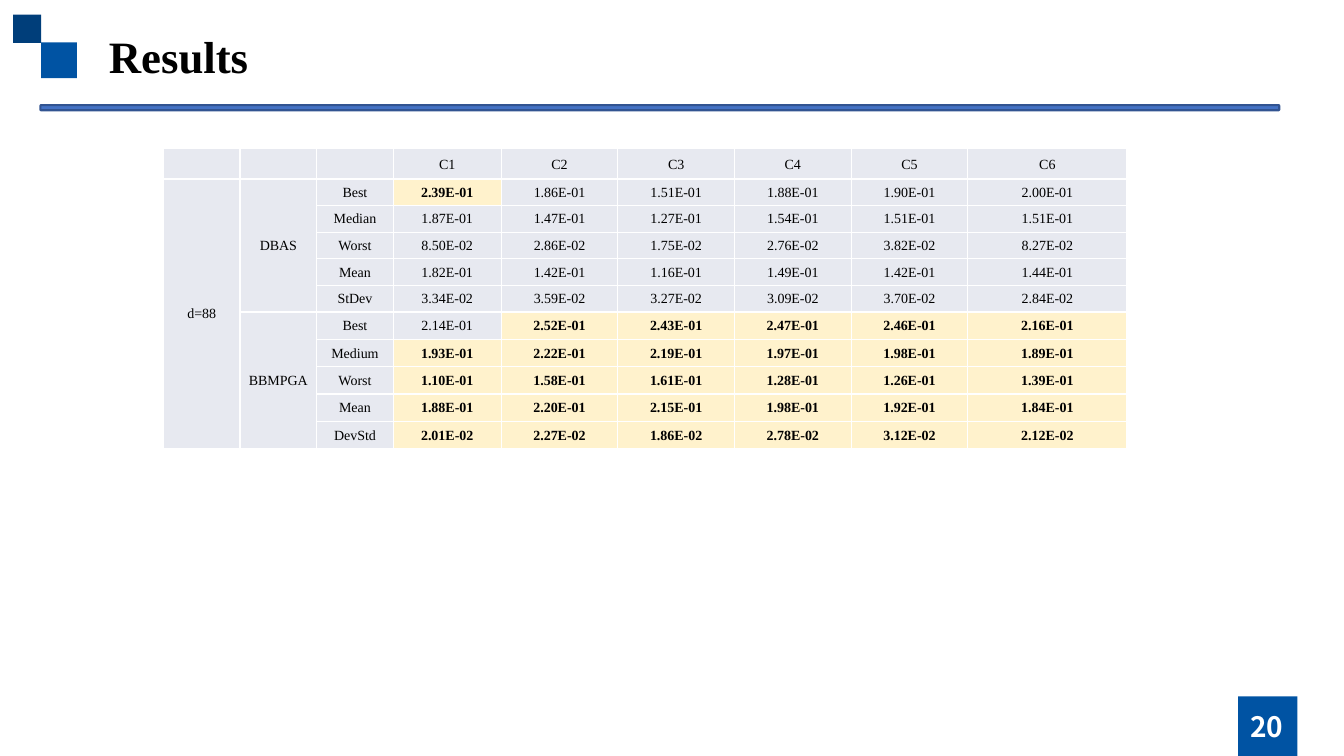
"""Build the results slide comparing DBAS and BBMPGA."""
from lxml import etree
from pptx import Presentation
from pptx.dml.color import RGBColor
from pptx.enum.shapes import MSO_SHAPE
from pptx.enum.text import MSO_ANCHOR, PP_ALIGN
from pptx.oxml.ns import qn
from pptx.util import Cm, Pt

RECT, ROUNDED = MSO_SHAPE.RECTANGLE, MSO_SHAPE.ROUNDED_RECTANGLE
MIDDLE, CENTER, LEFT = MSO_ANCHOR.MIDDLE, PP_ALIGN.CENTER, PP_ALIGN.LEFT
TITLE_ONLY = 5
SERIF, SANS = "Times New Roman", "Noto Sans CJK SC"
BLUE, NAVY, BLACK, WHITE = "0053A3", "003E7A", "000000", "FFFFFF"
GREY, YELLOW = "E7E9F0", "FFF2CC"

TITLE, PAGE = "Results", "20"
DIMENSION = "d=88"
CASES = ["C1", "C2", "C3", "C4", "C5", "C6"]
METHODS = {
    "DBAS": [
        ("Best", "2.39E-01 1.86E-01 1.51E-01 1.88E-01 1.90E-01 2.00E-01"),
        ("Median", "1.87E-01 1.47E-01 1.27E-01 1.54E-01 1.51E-01 1.51E-01"),
        ("Worst", "8.50E-02 2.86E-02 1.75E-02 2.76E-02 3.82E-02 8.27E-02"),
        ("Mean", "1.82E-01 1.42E-01 1.16E-01 1.49E-01 1.42E-01 1.44E-01"),
        ("StDev", "3.34E-02 3.59E-02 3.27E-02 3.09E-02 3.70E-02 2.84E-02"),
    ],
    "BBMPGA": [
        ("Best", "2.14E-01 2.52E-01 2.43E-01 2.47E-01 2.46E-01 2.16E-01"),
        ("Medium", "1.93E-01 2.22E-01 2.19E-01 1.97E-01 1.98E-01 1.89E-01"),
        ("Worst", "1.10E-01 1.58E-01 1.61E-01 1.28E-01 1.26E-01 1.39E-01"),
        ("Mean", "1.88E-01 2.20E-01 2.15E-01 1.98E-01 1.92E-01 1.84E-01"),
        ("DevStd", "2.01E-02 2.27E-02 1.86E-02 2.78E-02 3.12E-02 2.12E-02"),
    ],
}
LOWER_WINS = ("StDev", "DevStd")
LABEL_COLS = 3
COL_WIDTHS = [1.93] * LABEL_COLS + [2.72] + [2.94] * 4 + [4.01]
ROW_HEIGHTS = [0.76] + [0.67] * 5 + [0.69] * 5
TABLE_LEFT, TABLE_TOP = 4.12, 3.75
SQUARES = [(1.04, 1.07, 0.9, BLUE), (0.33, 0.37, 0.71, NAVY), (31.2, 17.55, 1.5, BLUE)]


def color(hex_code):
    return RGBColor.from_string(hex_code)


def add_block(shapes, kind, left, top, width, height, fill):
    block = shapes.add_shape(kind, Cm(left), Cm(top), Cm(width), Cm(height))
    block.shadow.inherit = False
    block.fill.solid()
    block.fill.fore_color.rgb = color(fill)
    block.line.fill.background()
    return block


def write(frame, text, size, font, ink, bold, align):
    paragraph = frame.paragraphs[0]
    paragraph.alignment = align
    run = paragraph.add_run()
    run.text = text
    run.font.size, run.font.name, run.font.bold = Pt(size), font, bold
    run.font.color.rgb = color(ink)


def style_cell(cell, fill):
    cell.vertical_anchor = MIDDLE
    cell.margin_left = cell.margin_right = cell.margin_top = Cm(0.02)
    cell.margin_bottom = 0
    properties = cell._tc.get_or_add_tcPr()
    for side in ("a:lnL", "a:lnR", "a:lnT", "a:lnB"):
        border = etree.SubElement(properties, qn(side), w=str(Pt(1)))
        solid = etree.SubElement(border, qn("a:solidFill"))
        etree.SubElement(solid, qn("a:srgbClr"), val=WHITE)
    cell.fill.solid()
    cell.fill.fore_color.rgb = color(fill)
    ending = cell.text_frame.paragraphs[0]._p.get_or_add_endParaRPr()
    ending.set("sz", "1000")


def table_rows():
    rows = [[""] * LABEL_COLS + CASES]
    winners = set()
    size = len(METHODS["DBAS"])
    for method, stats in METHODS.items():
        for index, (stat, values) in enumerate(stats):
            dimension = DIMENSION if len(rows) == 1 else ""
            rows.append([dimension, "" if index else method, stat] + values.split())
    for row in range(1, size + 1):
        pick = min if rows[row][2] in LOWER_WINS else max
        for col in range(LABEL_COLS, len(rows[0])):
            winners.add((pick((row, row + size), key=lambda r: float(rows[r][col])), col))
    return rows, winners


def add_results(shapes):
    rows, winners = table_rows()
    table = shapes.add_table(len(rows), len(rows[0]), Cm(TABLE_LEFT), Cm(TABLE_TOP),
                             Cm(sum(COL_WIDTHS)), Cm(sum(ROW_HEIGHTS))).table
    table.first_row = table.horz_banding = False
    for column, width in zip(table.columns, COL_WIDTHS):
        column.width = Cm(width)
    for line, height in zip(table.rows, ROW_HEIGHTS):
        line.height = Cm(height)
    for row, texts in enumerate(rows):
        for col, text in enumerate(texts):
            cell, wins = table.cell(row, col), (row, col) in winners
            style_cell(cell, YELLOW if wins else GREY)
            if text:
                write(cell.text_frame, text, 10, SERIF, BLACK, wins, CENTER)
    last = len(rows) - 1
    table.cell(1, 0).merge(table.cell(last, 0))
    top = 1
    for stats in METHODS.values():
        table.cell(top, 1).merge(table.cell(top + len(stats) - 1, 1))
        top += len(stats)


def main():
    deck = Presentation()
    deck.slide_width, deck.slide_height = Cm(33.87), Cm(19.05)
    slide = deck.slides.add_slide(deck.slide_layouts[TITLE_ONLY])
    shapes = slide.shapes
    for left, top, side, fill in SQUARES:
        add_block(shapes, RECT, left, top, side, side, fill)

    title = shapes.title
    title.left, title.top, title.width, title.height = Cm(2.49), Cm(0.58), Cm(27.53), Cm(1.63)
    title.text_frame.vertical_anchor = MIDDLE
    write(title.text_frame, TITLE, 32, SERIF, BLACK, True, LEFT)

    page = shapes.add_textbox(Cm(30), Cm(17.8), Cm(3.86), Cm(1.02)).text_frame
    page.word_wrap = True
    page.vertical_anchor = MIDDLE
    write(page, PAGE, 20, SANS, WHITE, True, CENTER)

    rule = add_block(shapes, ROUNDED, 1.02, 2.65, 31.22, 0.13, "4472C4")
    rule.line.color.rgb = color("325491")
    rule.line.width = Pt(1.5)

    add_results(shapes)
    deck.save("out.pptx")


if __name__ == "__main__":
    main()
